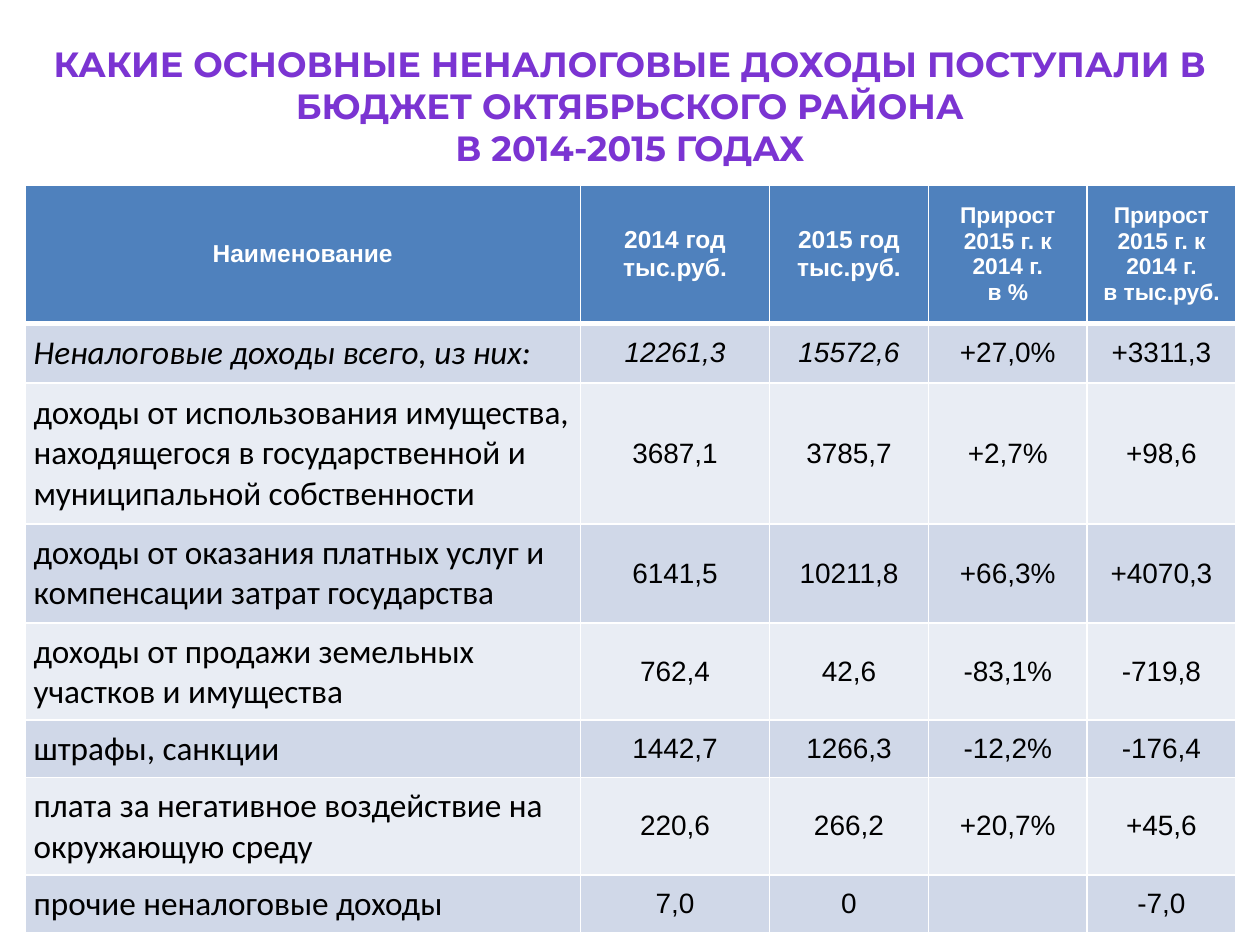
from lxml import etree
from pptx import Presentation
from pptx.dml.color import RGBColor
from pptx.enum.text import MSO_ANCHOR, PP_ALIGN
from pptx.oxml.ns import qn
from pptx.util import Pt

LEFT, CENTER = PP_ALIGN.LEFT, PP_ALIGN.CENTER
MIDDLE = MSO_ANCHOR.MIDDLE

WHITE = RGBColor(0xFF, 0xFF, 0xFF)
BLACK = RGBColor(0x00, 0x00, 0x00)
PURPLE = RGBColor(0x7B, 0x34, 0xD2)
HEADER_BLUE = RGBColor(0x4F, 0x81, 0xBD)
BANDS = (RGBColor(0xD0, 0xD8, 0xE8), RGBColor(0xE9, 0xED, 0xF4))

TITLE = ("КАКИЕ ОСНОВНЫЕ НЕНАЛОГОВЫЕ ДОХОДЫ ПОСТУПАЛИ В "
         "БЮДЖЕТ ОКТЯБРЬСКОГО РАЙОНА\vВ 2014-2015 ГОДАХ")
COLUMN_WIDTHS = (317.5, 108, 90.75, 90.75, 85)
ROW_HEIGHTS = (79, 34.25, 80.5, 56.5, 55.5, 32, 55.5, 32)
HEADINGS = (
    ("Наименование", 14),
    ("2014 год\nтыс.руб.", 14),
    ("2015 год\nтыс.руб.", 14),
    ("Прирост\n2015 г. к 2014 г.\nв %", 13),
    ("Прирост\n2015 г. к 2014 г.\nв тыс.руб.", 13),
)
INCOMES = (
    ("Неналоговые доходы всего, из них:", "12261,3", "15572,6", "+27,0%", "+3311,3"),
    ("доходы от использования имущества, находящегося в государственной "
     "и муниципальной собственности", "3687,1", "3785,7", "+2,7%", "+98,6"),
    ("доходы от оказания платных услуг и компенсации затрат государства",
     "6141,5", "10211,8", "+66,3%", "+4070,3"),
    ("доходы от продажи земельных участков и имущества",
     "762,4", "42,6", "-83,1%", "-719,8"),
    ("штрафы, санкции", "1442,7", "1266,3", "-12,2%", "-176,4"),
    ("плата за негативное воздействие на окружающую среду",
     "220,6", "266,2", "+20,7%", "+45,6"),
    ("прочие неналоговые доходы", "7,0", "0", "", "-7,0"),
)


def write_text(frame, text, font_name, size, color, align=CENTER, bold=False, italic=False):
    frame.text = text
    for para in frame.paragraphs:
        para.alignment = align
        font = para.font
        font.name, font.size = font_name, Pt(size)
        font.bold, font.italic = bold, italic
        font.color.rgb = color


def style_cell(cell, fill, top=1, bottom=1):
    """Give the cell white borders of the given point widths, then its fill."""
    properties = cell._tc.get_or_add_tcPr()
    for side, width in (("L", 1), ("R", 1), ("T", top), ("B", bottom)):
        line = etree.SubElement(properties, qn(f"a:ln{side}"), w=str(Pt(width)))
        solid = etree.SubElement(line, qn("a:solidFill"))
        etree.SubElement(solid, qn("a:srgbClr"), val=str(WHITE))
    cell.fill.solid()
    cell.fill.fore_color.rgb = fill
    cell.vertical_anchor = MIDDLE


def add_title(page, left, top, width, height):
    box = page.shapes.add_textbox(Pt(left), Pt(top), Pt(width), Pt(height))
    box.text_frame.word_wrap = True
    write_text(box.text_frame, TITLE, "Montserrat", 20, PURPLE, bold=True)


def add_income_table(page, left, top):
    frame = page.shapes.add_table(
        len(ROW_HEIGHTS), len(COLUMN_WIDTHS), Pt(left), Pt(top),
        Pt(sum(COLUMN_WIDTHS)), Pt(sum(ROW_HEIGHTS)))
    table = frame.table
    for column, width in zip(table.columns, COLUMN_WIDTHS):
        column.width = Pt(width)
    for row, height in zip(table.rows, ROW_HEIGHTS):
        row.height = Pt(height)

    for cell, (heading, size) in zip(table.rows[0].cells, HEADINGS):
        style_cell(cell, HEADER_BLUE, bottom=3)
        write_text(cell.text_frame, heading, "Arial", size, WHITE, bold=True)

    for row_number, income in enumerate(INCOMES):
        is_total = row_number == 0
        for column_number, text in enumerate(income):
            cell = table.cell(row_number + 1, column_number)
            style_cell(cell, BANDS[row_number % 2], top=3 if is_total else 1)
            italic = is_total and column_number < 3
            if column_number == 0:
                cell.margin_left = cell.margin_right = Pt(5)
                cell.margin_top = cell.margin_bottom = Pt(5)
                write_text(cell.text_frame, text, "Calibri", 19, BLACK, LEFT, italic=italic)
            else:
                write_text(cell.text_frame, text, "Arial", 16, BLACK, italic=italic)


def main():
    deck = Presentation()
    deck.slide_width, deck.slide_height = Pt(720), Pt(540)
    page = deck.slides.add_slide(deck.slide_layouts[6])
    add_title(page, 0, 21, 720, 80)
    add_income_table(page, 14.25, 105.75)
    deck.save("out.pptx")


if __name__ == "__main__":
    main()
